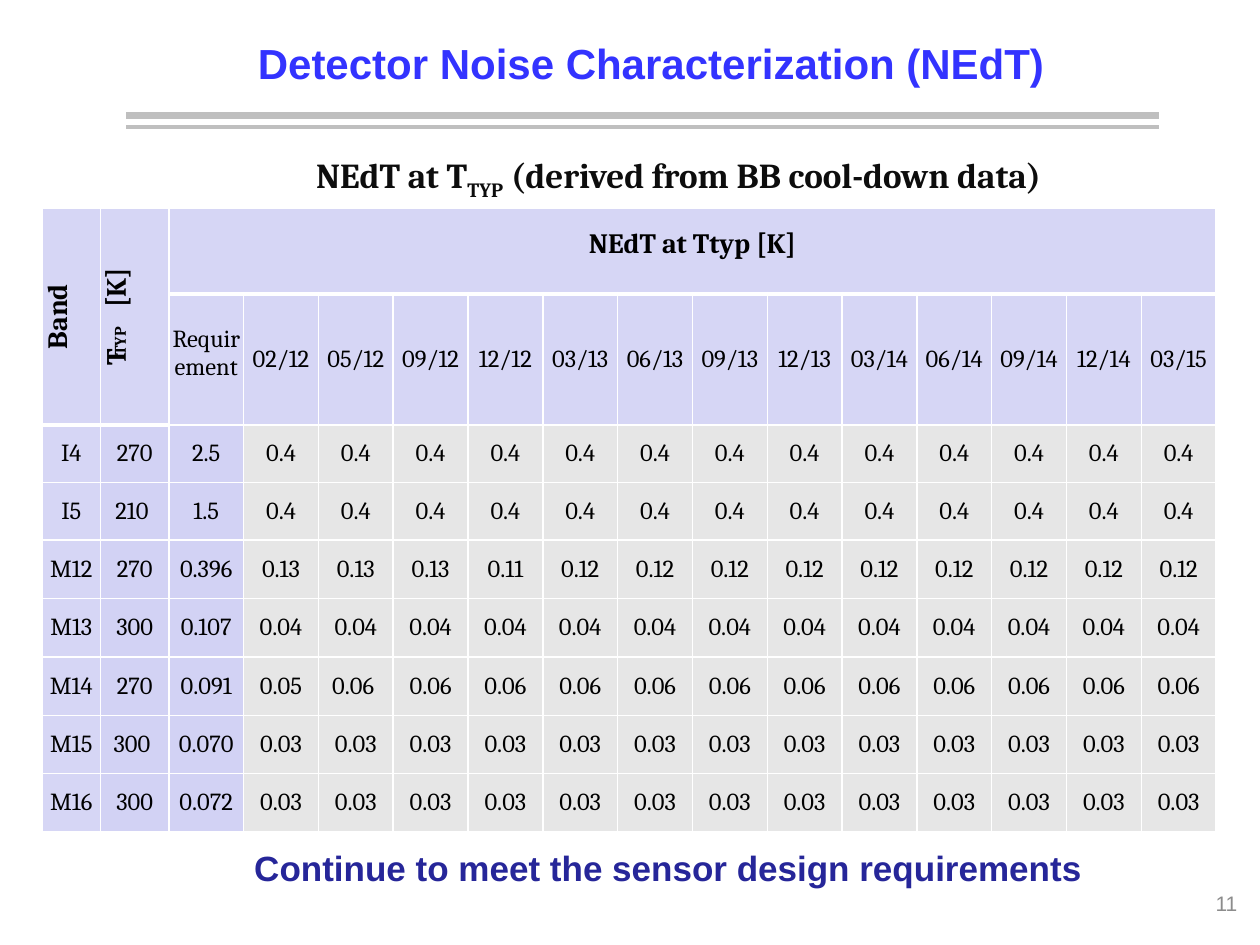
from pptx import Presentation
from pptx.dml.color import RGBColor
from pptx.enum.shapes import MSO_CONNECTOR as CONNECTOR
from pptx.enum.text import MSO_ANCHOR as ANCHOR, MSO_AUTO_SIZE as AUTO, PP_ALIGN as ALIGN
from pptx.oxml import parse_xml
from pptx.oxml.ns import nsdecls
from pptx.util import Pt

COLORS = {
    "title": "3333FF", "caption": "0D0D0D", "conclusion": "262699",
    "number": "8C8C8C", "rule": "BFBFBF", "border": "FFFFFF", "ink": "000000",
    "header": "D6D6F5", "limit": "D2D2F4", "value": "E6E6E6",
}


def write(frame, text, size=14, color="ink", font="Cambria", bold=False, align=ALIGN.CENTER):
    """Fill the first paragraph; text is a string or (string, baseline) pairs."""
    paragraph = frame.paragraphs[0]
    paragraph.alignment = align
    for part, baseline in [(text, 0)] if isinstance(text, str) else text:
        run = paragraph.add_run()
        run.text = part
        run.font.size = Pt(size)
        run.font.name = font
        run.font.bold = bold
        run.font.color.rgb = RGBColor.from_string(COLORS[color])
        if baseline:
            run.font._element.set("baseline", str(baseline * 1000))


def style_cell(cell, fill, bottom_width=1):
    cell.fill.solid()
    cell.fill.fore_color.rgb = RGBColor.from_string(COLORS[fill])
    cell.vertical_anchor = ANCHOR.MIDDLE
    cell.margin_left = cell.margin_right = cell.margin_top = cell.margin_bottom = 0
    props = cell._tc.get_or_add_tcPr()
    for position, side in enumerate(("lnL", "lnR", "lnT", "lnB")):
        width = Pt(bottom_width if side == "lnB" else 1)
        props.insert(position, parse_xml(
            f'<a:{side} {nsdecls("a")} w="{width}"><a:solidFill>'
            f'<a:srgbClr val="{COLORS["border"]}"/></a:solidFill></a:{side}>'))


prs = Presentation()
prs.slide_width, prs.slide_height = Pt(720), Pt(540)
slide = prs.slides.add_slide(prs.slide_layouts[6])

# Double rule under the title
for y, weight in ((66.3, 4), (72.7, 2)):
    rule = slide.shapes.add_connector(CONNECTOR.STRAIGHT, Pt(72), Pt(y), Pt(662.4), Pt(y))
    rule.line.color.rgb = RGBColor.from_string(COLORS["rule"])
    rule.line.width = Pt(weight)
    rule._element.spPr.append(parse_xml(f'<a:effectLst {nsdecls("a")}/>'))

# Title, caption, conclusion and slide number
caption = [("NEdT at T", 0), ("TYP", -25), (" (derived from BB cool-down data)", 0)]
texts = [
    ((72, 18, 600, 36), "Detector Noise Characterization (NEdT)", True,
     dict(size=24, color="title", font="Arial", bold=True)),
    ((173.5, 84.2, 432.7, 31.7), caption, False,
     dict(size=20, color="caption", bold=True, align=ALIGN.LEFT)),
    ((138.2, 480.2, 491, 31.7), "Continue to meet the sensor design requirements", False,
     dict(size=20, color="conclusion", font="Arial", bold=True, align=ALIGN.LEFT)),
    ((662.4, 498.2, 51.8, 36), "11", True,
     dict(size=12, color="number", font="Arial", align=ALIGN.RIGHT)),
]
for place, text, fixed, style in texts:
    frame = slide.shapes.add_textbox(*map(Pt, place)).text_frame
    frame.word_wrap = fixed
    frame.auto_size = AUTO.NONE if fixed else AUTO.SHAPE_TO_FIT_TEXT
    frame.vertical_anchor = ANCHOR.MIDDLE if fixed else ANCHOR.TOP
    write(frame, text, **style)

# Noise table: band, typical temperature, requirement, then one value per date
dates = ["02/12", "05/12", "09/12", "12/12", "03/13", "06/13", "09/13",
         "12/13", "03/14", "06/14", "09/14", "12/14", "03/15"]
bands = [
    ["I4", "270", "2.5"] + ["0.4"] * 13,
    ["I5", "210 ", "1.5"] + ["0.4"] * 13,
    ["M12", "270", "0.396"] + ["0.13"] * 3 + ["0.11"] + ["0.12"] * 9,
    ["M13", "300", "0.107"] + ["0.04"] * 13,
    ["M14", "270", "0.091", "0.05", "0.06 "] + ["0.06"] * 11,
    ["M15", "300 ", "0.070"] + ["0.03"] * 13,
    ["M16", "300", "0.072"] + ["0.03"] * 13,
]
widths = [33.5, 39] + [42.75] * 14
heights = [49, 75] + [32.8] * 2 + [33.4] * 5
table = slide.shapes.add_table(len(heights), len(widths), Pt(24), Pt(119),
                               Pt(sum(widths)), Pt(sum(heights))).table
for column, width in zip(table.columns, widths):
    column.width = Pt(width)
for row, height in zip(table.rows, heights):
    row.height = Pt(height)

band_head, temperature_head, noise_head = (table.cell(0, c) for c in range(3))
band_head.merge(table.cell(1, 0))
temperature_head.merge(table.cell(1, 1))
noise_head.merge(table.cell(0, 15))

# Header cells
for r in range(2):
    for c in range(len(widths)):
        style_cell(table.cell(r, c), "header", 3 if r == 0 or c < 2 else 1)
headings = [
    (band_head, "Band", 14.4),
    (temperature_head, [("T", 0), ("TYP", -25), ("  [K]", 0)], 7.2),
    (noise_head, "NEdT at Ttyp [K]", 7.2),
]
for cell, text, margin in headings:
    cell.margin_bottom = Pt(margin)
    write(cell.text_frame, text, size=16, bold=True)
for cell in (band_head, temperature_head):
    cell._tc.get_or_add_tcPr().set("vert", "vert270")
for c, text in enumerate(["Requirement"] + dates, start=2):
    write(table.cell(1, c).text_frame, text)
table.cell(1, 2).margin_bottom = Pt(7.2)

# Body cells
for r, values in enumerate(bands, start=2):
    for c, text in enumerate(values):
        cell = table.cell(r, c)
        style_cell(cell, "header" if c == 0 else "limit" if c < 3 else "value")
        write(cell.text_frame, text)

prs.save("out.pptx")
